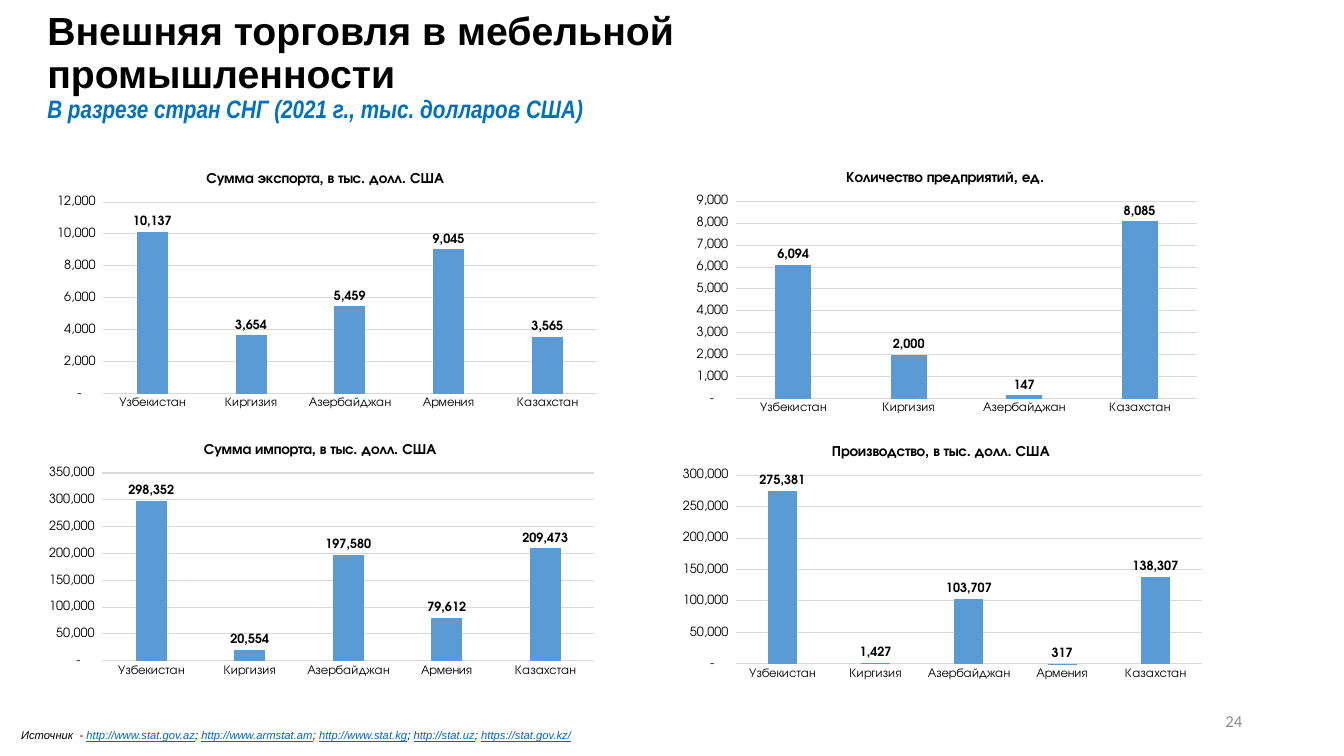
from dataclasses import dataclass

from pptx import Presentation
from pptx import util as u
from pptx.chart import data as chart_data
from pptx.dml import color
from pptx.enum import chart as charts, text


@dataclass(frozen=True)
class Theme:
    black: str = "000000"
    accent: str = "0070C0"
    link: str = "0563C1"
    muted: str = "8C8C8C"
    bar: str = "5B9BD5"
    grid: str = "D9D9D9"
    heading_font: str = "Arial"
    subtitle_font: str = "Arial Narrow"
    number_font: str = "Calibri"
    chart_font: str = "TeX Gyre Adventor"
    title_size: float = 28
    subtitle_size: float = 18
    page_size: float = 12
    chart_title_size: float = 10.5
    chart_size: float = 9
    source_size: float = 8
    rule_width: float = 0.75


THEME = Theme()
SLIDE_WIDTH, SLIDE_HEIGHT = u.Inches(13.33), u.Inches(7.5)
NUMBER_FORMAT = r'_-* #,##0_-;\-* #,##0_-;_-* "-"??_-;_-@_'
COUNTRIES = ("Узбекистан", "Киргизия", "Азербайджан", "Армения", "Казахстан")
WITHOUT_ARMENIA = tuple(name for name in COUNTRIES if name != "Армения")

TRADE_CHARTS = (
    ("Сумма экспорта, в тыс. долл. США", (3.15, 20.93, 42.09, 33.87),
     COUNTRIES, (10137, 3654, 5459, 9045, 3565)),
    ("Сумма импорта, в тыс. долл. США", (2.55, 56.8, 42.54, 33.33),
     COUNTRIES, (298352, 20554, 197580, 79612, 209473)),
    ("Количество предприятий, ед.", (50.79, 20.8, 39.08, 34.67),
     WITHOUT_ARMENIA, (6094, 2000, 147, 8085)),
    ("Производство, в тыс. долл. США", (49.74, 57.07, 40.51, 33.47),
     COUNTRIES, (275381, 1427, 103707, 317, 138307)),
)
SOURCES = ("http://www.stat.gov.az", "http://www.armstat.am", "http://www.stat.kg",
           "http://stat.uz", "https://stat.gov.kz/")


def place(left, top, width, height):
    return (int(SLIDE_WIDTH * left / 100), int(SLIDE_HEIGHT * top / 100),
            int(SLIDE_WIDTH * width / 100), int(SLIDE_HEIGHT * height / 100))


def style_font(font, name, size, colour, bold=False, italic=False):
    font.name = name
    font.size = u.Pt(size)
    font.bold = bold
    font.italic = italic
    font.color.rgb = color.RGBColor.from_string(colour)


def style_line(line, colour):
    line.width = u.Pt(THEME.rule_width)
    line.color.rgb = color.RGBColor.from_string(colour)


def add_run(paragraph, words, *style, underline=False, **emphasis):
    run = paragraph.add_run()
    run.text = words
    style_font(run.font, *style, **emphasis)
    run.font.underline = underline


def add_text_box(slide, area, anchor, wrap=True):
    frame = slide.shapes.add_textbox(*place(*area)).text_frame
    frame.word_wrap = wrap
    frame.vertical_anchor = anchor
    return frame.paragraphs[0]


def add_title(slide):
    paragraph = add_text_box(slide, (2.78, 3.2, 63.62, 11.6), text.MSO_ANCHOR.MIDDLE)
    paragraph.line_spacing = 0.9
    add_run(paragraph, "Внешняя торговля в мебельной промышленности",
            THEME.heading_font, THEME.title_size, THEME.black, bold=True)
    paragraph.add_line_break()
    add_run(paragraph, "В разрезе стран СНГ (2021 г., тыс. долларов США)",
            THEME.subtitle_font, THEME.subtitle_size, THEME.accent, bold=True, italic=True)


def add_page_number(slide):
    paragraph = add_text_box(slide, (70.67, 92.67, 22.51, 5.33), text.MSO_ANCHOR.MIDDLE)
    paragraph.alignment = text.PP_ALIGN.RIGHT
    add_run(paragraph, "24", THEME.number_font, THEME.page_size, THEME.muted)


def add_sources(slide):
    paragraph = add_text_box(slide, (0.83, 95.73, 42.61, 4.27), text.MSO_ANCHOR.TOP, wrap=False)
    style = (THEME.heading_font, THEME.source_size)
    lead = "Источник  - "
    for address in SOURCES:
        add_run(paragraph, lead, *style, THEME.black, italic=True)
        add_run(paragraph, address, *style, THEME.link, italic=True, underline=True)
        lead = "; "


def style_axes(chart):
    for axis in (chart.category_axis, chart.value_axis):
        axis.major_tick_mark = charts.XL_TICK_MARK.NONE
        axis.minor_tick_mark = charts.XL_TICK_MARK.NONE
        style_font(axis.tick_labels.font, THEME.chart_font, THEME.chart_size, THEME.black)
    style_line(chart.category_axis.format.line, THEME.grid)
    value_axis = chart.value_axis
    value_axis.format.line.fill.background()
    style_line(value_axis.major_gridlines.format.line, THEME.grid)
    value_axis.tick_labels.number_format = NUMBER_FORMAT
    value_axis.tick_labels.number_format_is_linked = False


def style_bars(plot):
    plot.gap_width = 219
    plot.overlap = -27
    plot.vary_by_categories = False
    fill = plot.series[0].format.fill
    fill.solid()
    fill.fore_color.rgb = color.RGBColor.from_string(THEME.bar)
    labels = plot.series[0].data_labels
    labels.show_value = True
    labels.position = charts.XL_LABEL_POSITION.OUTSIDE_END
    labels.number_format = NUMBER_FORMAT
    labels.number_format_is_linked = False
    style_font(labels.font, THEME.chart_font, THEME.chart_size, THEME.black, bold=True)


def add_column_chart(slide, title, area, countries, values):
    data = chart_data.CategoryChartData(number_format=NUMBER_FORMAT)
    data.categories = countries
    data.add_series(title, values)
    chart = slide.shapes.add_chart(
        charts.XL_CHART_TYPE.COLUMN_CLUSTERED, *place(*area), data).chart
    style_font(chart.font, THEME.chart_font, THEME.chart_size, THEME.black)
    chart.has_legend = False
    chart.has_title = True
    chart.chart_title.include_in_layout = False
    add_run(chart.chart_title.text_frame.paragraphs[0], title,
            THEME.chart_font, THEME.chart_title_size, THEME.black, bold=True)
    style_axes(chart)
    style_bars(chart.plots[0])


def main():
    presentation = Presentation()
    presentation.slide_width, presentation.slide_height = SLIDE_WIDTH, SLIDE_HEIGHT
    slide = presentation.slides.add_slide(presentation.slide_layouts[6])
    add_page_number(slide)
    add_title(slide)
    for trade_chart in TRADE_CHARTS:
        add_column_chart(slide, *trade_chart)
    add_sources(slide)
    presentation.save("out.pptx")


if __name__ == "__main__":
    main()
